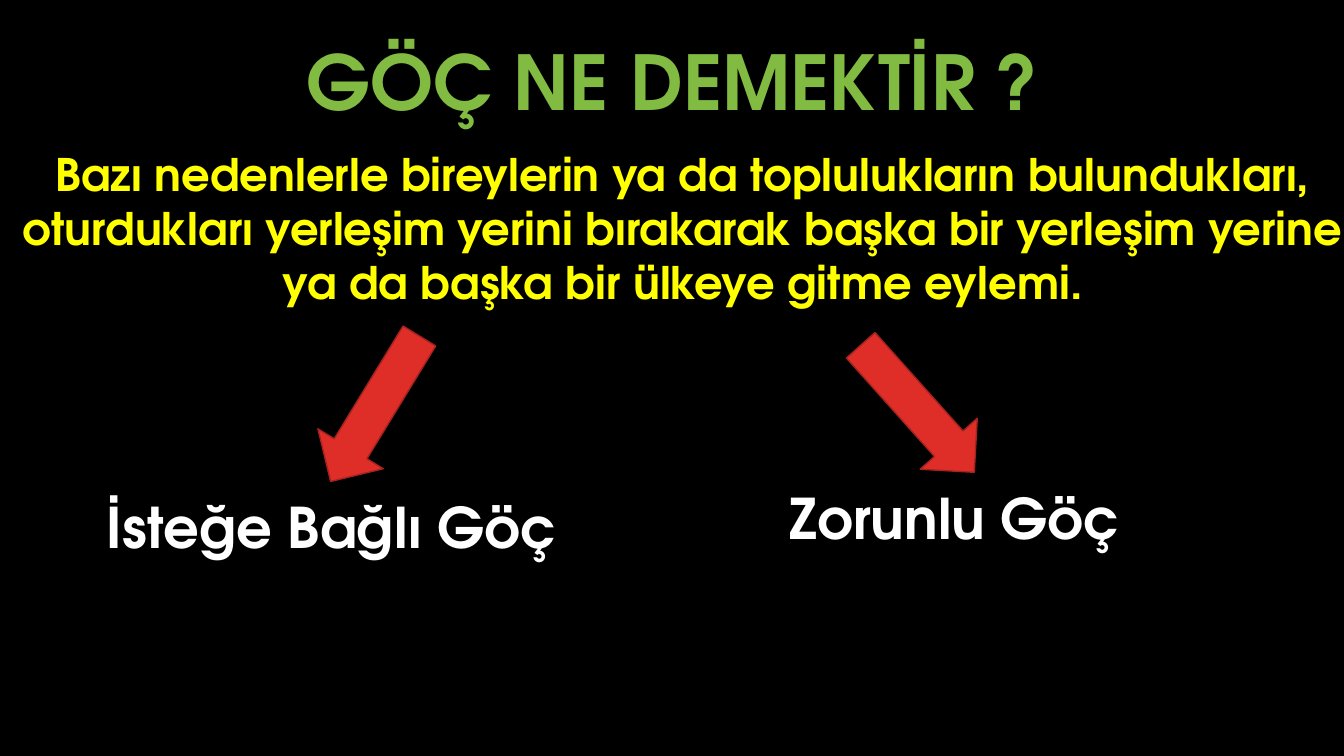
"""Build a slide that defines migration and names its two kinds."""
from pptx import Presentation
from pptx.dml.color import RGBColor
from pptx.enum.shapes import MSO_SHAPE
from pptx.enum.text import MSO_AUTO_SIZE, PP_ALIGN
from pptx.util import Inches, Pt

FONT = "TeX Gyre Adventor"
BLACK = RGBColor(0x00, 0x00, 0x00)
GREEN = RGBColor(0x81, 0xBB, 0x42)
YELLOW = RGBColor(0xFF, 0xFF, 0x00)
WHITE = RGBColor(0xFF, 0xFF, 0xFF)
RED = RGBColor(0xDF, 0x2E, 0x28)
DARK_RED = RGBColor(0xA5, 0x22, 0x1E)

TITLE = "GÖÇ NE DEMEKTİR ?"
DEFINITION = (
    "Bazı nedenlerle bireylerin ya da toplulukların bulundukları, "
    "oturdukları yerleşim yerini bırakarak başka bir yerleşim yerine "
    "ya da başka bir ülkeye gitme eylemi."
)
KINDS = [
    {"label": "İsteğe Bağlı Göç", "box": (0.93, 4.84, 4.71, 0.77),
     "arrow_left": 3.34, "rotation": 31.4},
    {"label": "Zorunlu Göç", "box": (7.71, 4.75, 3.51, 0.77),
     "arrow_left": 8.72, "rotation": 318.2},
]
ARROW_TOP, ARROW_WIDTH, ARROW_HEIGHT = 3.21, 0.76, 1.69


def add_text(slide, text, box, size, color, wrap=False):
    shape = slide.shapes.add_textbox(*map(Inches, box))
    frame = shape.text_frame
    frame.word_wrap = wrap
    frame.auto_size = MSO_AUTO_SIZE.SHAPE_TO_FIT_TEXT
    paragraph = frame.paragraphs[0]
    paragraph.alignment = PP_ALIGN.CENTER
    run = paragraph.add_run()
    run.text = text
    run.font.name = FONT
    run.font.size = Pt(size)
    run.font.bold = True
    run.font.color.rgb = color


def add_arrow(slide, left, rotation):
    box = (left, ARROW_TOP, ARROW_WIDTH, ARROW_HEIGHT)
    shape = slide.shapes.add_shape(MSO_SHAPE.DOWN_ARROW, *map(Inches, box))
    shape.rotation = rotation
    shape.shadow.inherit = False
    shape.fill.solid()
    shape.fill.fore_color.rgb = RED
    shape.line.color.rgb = DARK_RED
    shape.line.width = Pt(1)


def main():
    presentation = Presentation()
    presentation.slide_width = Inches(13.33)
    presentation.slide_height = Inches(7.5)
    slide = presentation.slides.add_slide(presentation.slide_layouts[6])
    slide.background.fill.solid()
    slide.background.fill.fore_color.rgb = BLACK

    add_text(slide, TITLE, (2.91, 0.3, 7.52, 1.01), size=54, color=GREEN)
    add_text(slide, DEFINITION, (0.11, 1.41, 13.33, 1.72), size=32,
             color=YELLOW, wrap=True)
    for kind in KINDS:
        add_arrow(slide, kind["arrow_left"], kind["rotation"])
        add_text(slide, kind["label"], kind["box"], size=40, color=WHITE)

    presentation.save("out.pptx")


if __name__ == "__main__":
    main()
